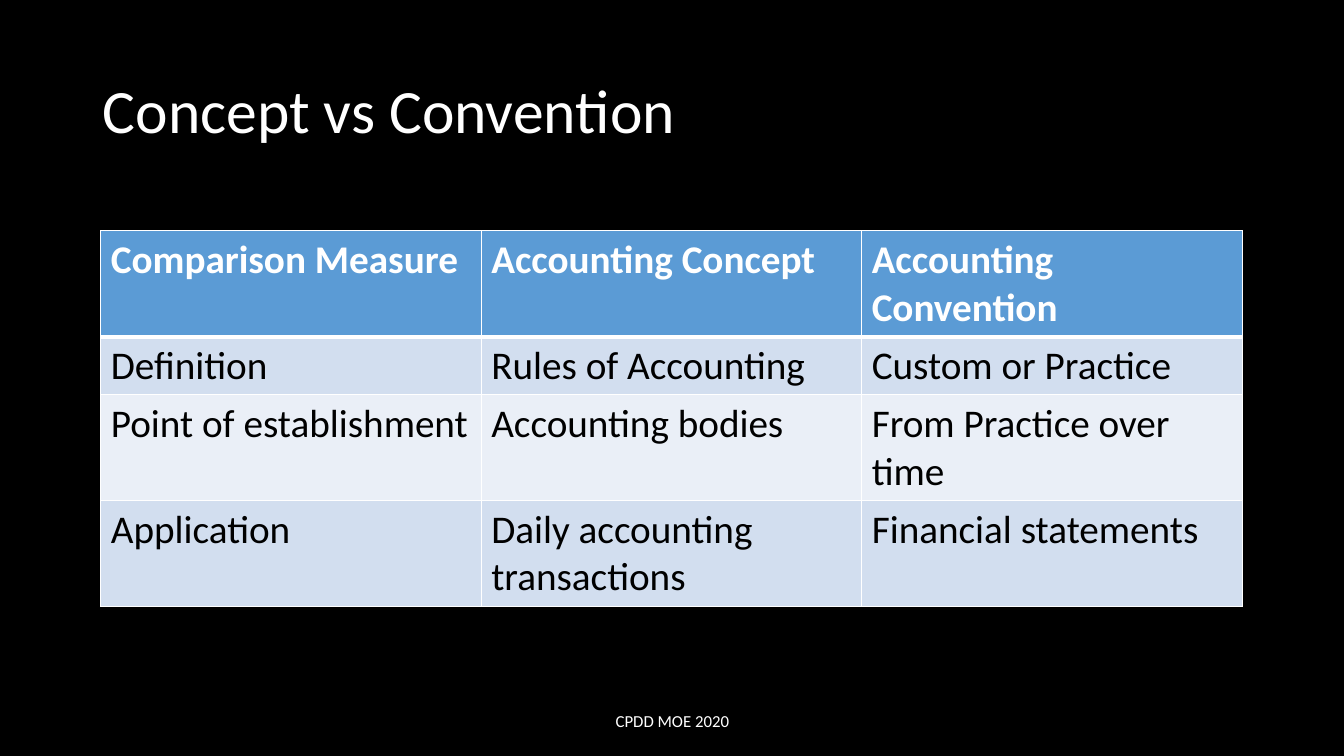
from lxml.etree import SubElement
from pptx import Presentation
from pptx.dml.color import RGBColor
from pptx.enum.text import MSO_ANCHOR, PP_ALIGN
from pptx.oxml.ns import qn
from pptx.util import Inches, Pt

FONT = "Calibri"
COLORS = {
    "background": "000000",
    "light": "FFFFFF",
    "dark": "000000",
    "header": "5B9BD5",
    "odd_row": "D2DEEF",
    "even_row": "EAEFF7",
}
ROWS = [
    ["Comparison Measure", "Accounting Concept", "Accounting Convention"],
    ["Definition", "Rules of Accounting", "Custom or Practice"],
    ["Point of establishment", "Accounting bodies", "From Practice over time"],
    ["Application", "Daily accounting transactions", "Financial statements"],
]
ROW_HEIGHTS = [1.05, 0.57, 1.05, 1.05]


def rgb(name):
    return RGBColor.from_string(COLORS[name])


def add_run(p, text, size, color, bold=False):
    r = p.add_run()
    r.text = text
    r.font.name = FONT
    r.font.size = Pt(size)
    r.font.bold = bold
    r.font.color.rgb = rgb(color)


def place(sp, box):
    sp.left, sp.top, sp.width, sp.height = [Inches(v) for v in box]


def set_borders(cell, bottom):
    tcPr = cell._tc.get_or_add_tcPr()
    for side, width in (("L", 1), ("R", 1), ("T", 1), ("B", bottom)):
        ln = SubElement(tcPr, qn(f"a:ln{side}"), w=str(Pt(width)))
        fill = SubElement(ln, qn("a:solidFill"))
        SubElement(fill, qn("a:srgbClr"), val=COLORS["light"])


def build_title(s, box):
    sp = s.shapes.title
    place(sp, box)
    tf = sp.text_frame
    tf.word_wrap = True
    tf.vertical_anchor = MSO_ANCHOR.MIDDLE
    p = tf.paragraphs[0]
    p.alignment = PP_ALIGN.LEFT
    p.line_spacing = 0.9
    add_run(p, "Concept vs Convention", 44, "light")


def build_table(s, left, top, width):
    table = s.shapes.add_table(
        len(ROWS), len(ROWS[0]), Inches(left), Inches(top),
        Inches(width), Inches(sum(ROW_HEIGHTS))).table
    for i, (texts, height) in enumerate(zip(ROWS, ROW_HEIGHTS)):
        table.rows[i].height = Inches(height)
        header = i == 0
        fill = "header" if header else "odd_row" if i % 2 else "even_row"
        for j, text in enumerate(texts):
            cell = table.cell(i, j)
            # The header rule is thicker than the grid lines
            set_borders(cell, 3 if header else 1)
            cell.fill.solid()
            cell.fill.fore_color.rgb = rgb(fill)
            add_run(cell.text_frame.paragraphs[0], text, 28,
                    "light" if header else "dark", header)


def build_footer(s, box):
    tf = s.shapes.add_textbox(*[Inches(v) for v in box]).text_frame
    tf.word_wrap = True
    tf.vertical_anchor = MSO_ANCHOR.MIDDLE
    p = tf.paragraphs[0]
    p.alignment = PP_ALIGN.CENTER
    add_run(p, "CPDD MOE 2020", 12, "light")


def main():
    prs = Presentation()
    prs.slide_width, prs.slide_height = Inches(13.33), Inches(7.5)
    s = prs.slides.add_slide(prs.slide_layouts[5])
    s.background.fill.solid()
    s.background.fill.fore_color.rgb = rgb("background")

    # Title, comparison table and footer, top to bottom
    build_title(s, (0.92, 0.4, 11.5, 1.45))
    build_table(s, 1, 2.29, 11.32)
    build_footer(s, (4.42, 6.95, 4.5, 0.4))
    prs.save("out.pptx")


if __name__ == "__main__":
    main()
